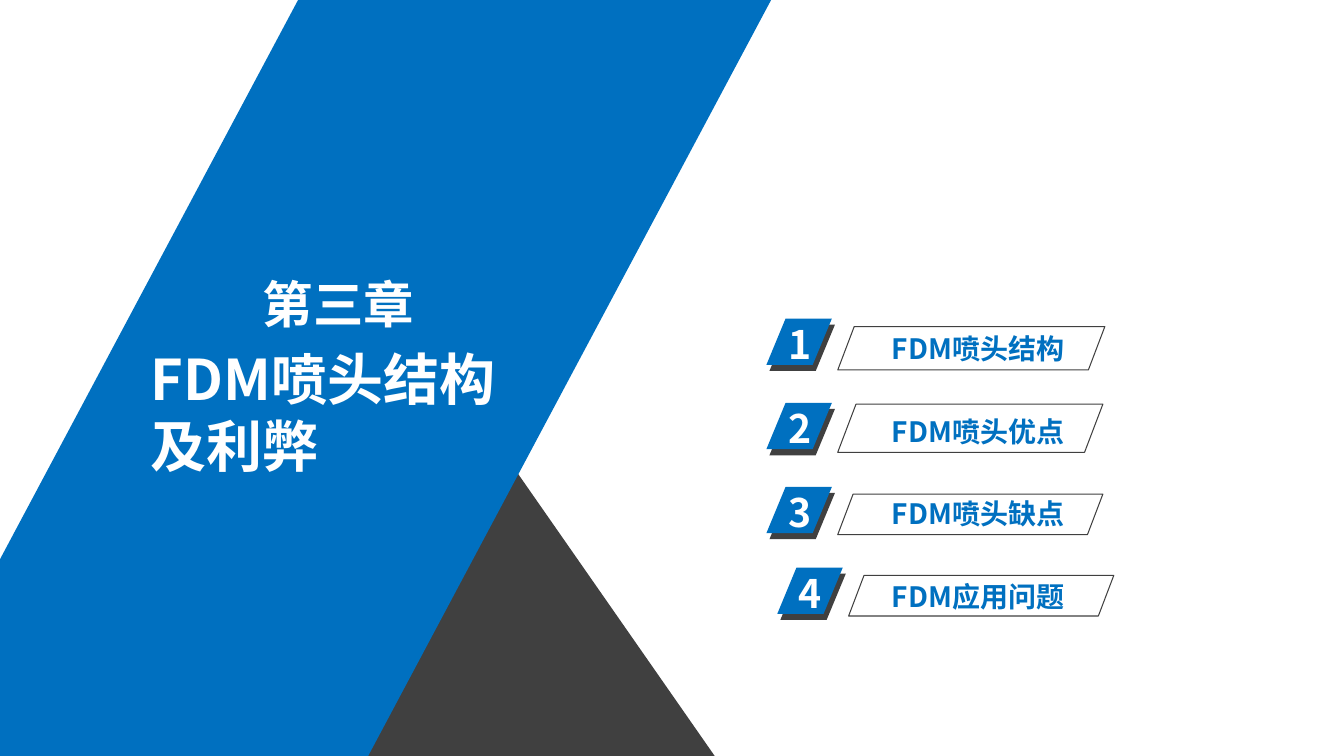
from lxml.etree import SubElement
from pptx import Presentation
from pptx.dml.color import RGBColor
from pptx.enum.shapes import MSO_SHAPE as SHAPE
from pptx.enum.text import MSO_AUTO_SIZE as AUTO_SIZE
from pptx.oxml.ns import qn
from pptx.util import Pt

BLUE = RGBColor(0x00, 0x70, 0xC0)
DARK = RGBColor(0x40, 0x40, 0x40)
WHITE = RGBColor(0xFF, 0xFF, 0xFF)


class Deck:
    """Holds the font and the current slide, and draws each kind of element."""

    def __init__(self, s, font):
        self.s = s
        self.font = font

    def paint(self, sp, fill=None, line=None):
        sp.shadow.inherit = False
        if fill is None:
            sp.fill.background()
        else:
            sp.fill.solid()
            sp.fill.fore_color.rgb = fill
        if line is None:
            sp.line.fill.background()
        else:
            sp.line.color.rgb = line
            sp.line.width = Pt(0.75)

    def slanted(self, x, y, w, h, slant, **paint):
        sp = self.s.shapes.add_shape(SHAPE.PARALLELOGRAM, Pt(x), Pt(y), Pt(w), Pt(h))
        sp.adjustments[0] = slant
        self.paint(sp, **paint)

    def polygon(self, points, **paint):
        corners = [(Pt(x), Pt(y)) for x, y in points]
        builder = self.s.shapes.build_freeform(*corners[0])
        builder.add_line_segments(corners[1:], close=True)
        self.paint(builder.convert_to_shape(), **paint)

    def text(self, text, x, y, w, h, size=20, color=WHITE, bold=True):
        tf = self.s.shapes.add_textbox(Pt(x), Pt(y), Pt(w), Pt(h)).text_frame
        tf.word_wrap = True
        tf.auto_size = AUTO_SIZE.SHAPE_TO_FIT_TEXT
        r = tf.paragraphs[0].add_run()
        r.text = text
        r.font.size = Pt(size)
        r.font.bold = bold
        r.font.color.rgb = color
        r.font.name = self.font
        SubElement(r._r.get_or_add_rPr(), qn("a:ea"), typeface=self.font)

    def badge(self, number, x, y):
        for dx, dy, fill in ((2.2, 4.3, DARK), (0, 0, BLUE)):
            self.slanted(x + dx, y + dy, 46.8, 33.1, 0.415, fill=fill)
        self.text(str(number), x + 8.4, y - 2.2, 49.7, 41, size=28)


def main():
    prs = Presentation()
    prs.slide_width, prs.slide_height = Pt(960), Pt(540)
    deck = Deck(prs.slides.add_slide(prs.slide_layouts[6]), "Noto Sans CJK SC")

    deck.polygon([(257, 540), (370, 338.4), (510.5, 540)], fill=DARK)
    deck.slanted(-74.9, 0, 625.7, 540, 0.533, fill=BLUE)
    deck.text("第三章", 180.7, 191.5, 130.3, 51.1, size=36)
    deck.text("FDM喷头结构及利弊", 100.8, 242.6, 271.4, 104.4, size=40)

    topics = [
        ("FDM喷头结构", 547.4, 227.6, 233.3, 190.8, 31),
        ("FDM喷头优点", 547.4, 287.8, 288.7, 189.4, 34.4),
        ("FDM喷头缺点", 547.4, 347.8, 352.9, 189.4, 29),
        ("FDM应用问题", 555.2, 405.4, 411, 189.4, 29),
    ]
    for i, (topic, x, badge_y, frame_y, w, h) in enumerate(topics):
        deck.badge(i + 1, x, badge_y)
        deck.slanted(x + 51, frame_y, w, h, 0.38, line=DARK)
        deck.text(topic, 630, 233.3 + 59.04 * i, 218.2, 31.7, color=BLUE)

    prs.save("out.pptx")


if __name__ == "__main__":
    main()
